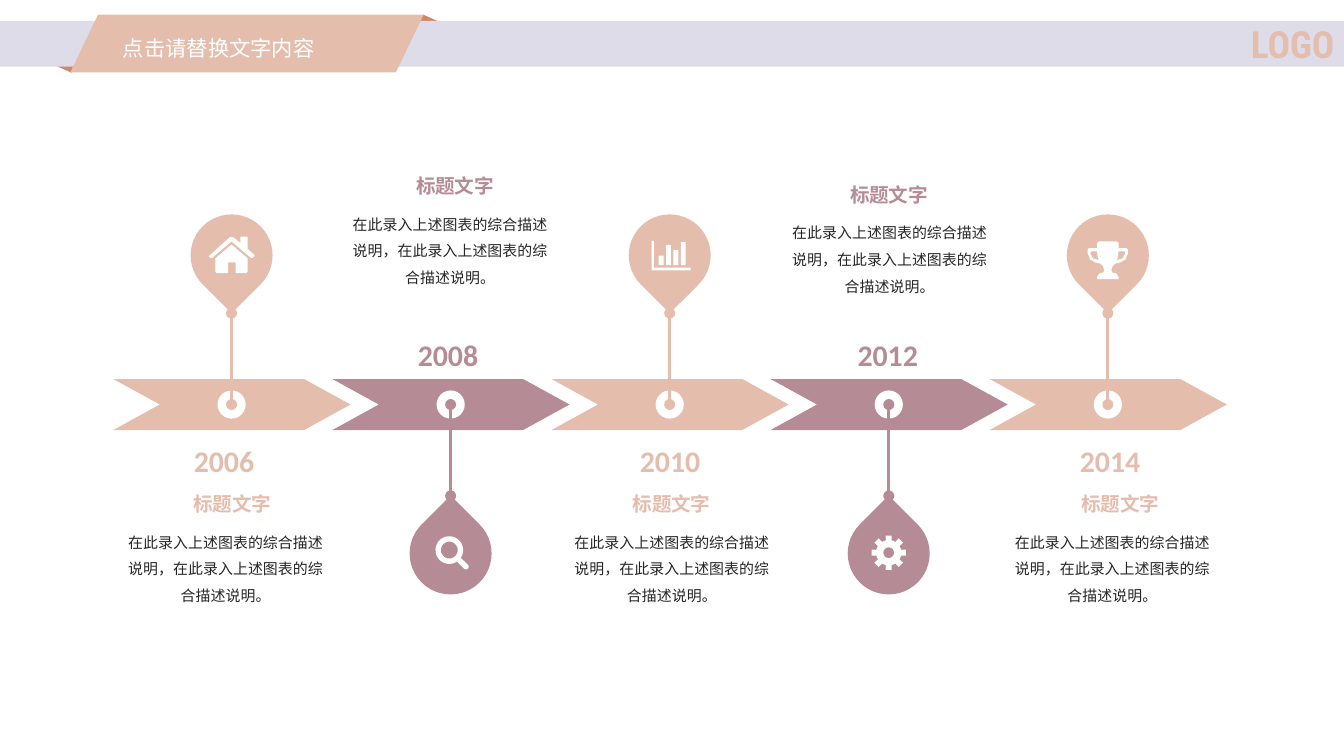
"""Build a five-step timeline slide with arrows, pins and captions."""
import math
from lxml import etree
from pptx import Presentation
from pptx import util as u
from pptx.dml.color import RGBColor
from pptx.enum import shapes, text
from pptx.oxml import ns

PEACH, MAUVE, WHITE = "E4BDAC", "B58C95", "FFFFFF"
S, A, V = shapes.MSO_SHAPE, text.PP_ALIGN, text.MSO_ANCHOR
CJK = "Noto Sans CJK SC"
BODY = "在此录入上述图表的综合描述说明，在此录入上述图表的综合描述说明。"


def paint(fill, color):
    """Give a fill, line fill or font fill a solid hex colour."""
    fill.solid()
    fill.fore_color.rgb = RGBColor.from_string(color)


def arc(cx, cy, r, start, end, n=32):
    """Return points along a circular arc, with angles in degrees."""
    steps = [math.radians(start + (end - start) * i / n) for i in range(n + 1)]
    return [(cx + r * math.cos(a), cy + r * math.sin(a)) for a in steps]


prs = Presentation()
prs.slide_width = u.Inches(10)
prs.slide_height = prs.slide_width * 9 // 16
s = prs.slides.add_slide(prs.slide_layouts[5])
G = prs.slide_width // 1000
PITCH, FIRST = 163, 172.3

parts = [
    (S.ISOSCELES_TRIANGLE, (270, 11, 90, 20), "CE8868", 0, ()),
    (S.ISOSCELES_TRIANGLE, (8, 34, 90, 20), "CE8868", 180, ()),
    (S.RECTANGLE, (0, 15.6, 1000, 34), "DEDCE9", 0, ()),
    (S.PARALLELOGRAM, (52.3, 11, 263, 43), PEACH, 0, (0.482,)),
]
for i in range(5):
    cx, low, color = FIRST + i * PITCH, i % 2, (PEACH, MAUVE)[i % 2]
    parts += [
        (S.NOTCHED_RIGHT_ARROW, (cx - 88, 282, 176.5, 38), color, 0, (1, 0.91)),
        (S.OVAL, (cx - 10.5, 290.5, 21, 21), WHITE, 0, ()),
        (S.TEAR, (cx - 30.5, 381.3 if low else 159.5, 61, 61), color, 315 if low else 135, ()),
    ]
for kind, box, color, turn, adj in parts:
    sp = s.shapes.add_shape(kind, *[int(v * G) for v in box])
    paint(sp.fill, color)
    sp.line.fill.background()
    sp.shadow.inherit = False
    sp.rotation = turn
    for k, v in enumerate(adj):
        sp.adjustments[k] = v
    if kind == S.RECTANGLE:
        bar = sp

for i in range(5):
    x, low = int((FIRST + i * PITCH) * G), i % 2
    ln = s.shapes.add_connector(shapes.MSO_CONNECTOR.STRAIGHT, x, (369 if low else 233) * G, x, 301 * G)
    paint(ln.line.fill, (PEACH, MAUVE)[low])
    ln.line.width = u.Pt(1.5)
    for tag in ("a:headEnd", "a:tailEnd"):
        etree.SubElement(ln.line._get_or_add_ln(), ns.qn(tag), type="oval")
    etree.SubElement(ln.element.spPr, ns.qn("a:effectLst"))

house = [
    [(-17, 0.5), (-1.5, -13.5), (0, -14), (1.5, -13.5), (6.5, -9.5), (6.5, -13.5),
     (7, -14.2), (11.5, -14.2), (12, -13.5), (12, -5), (17, -0.5), (17, 0.5),
     (15.5, 1.8), (14.5, 1.8), (0, -10.5), (-14.5, 1.8), (-15.5, 1.8)],
    [(-12, 2), (0, -8.2), (12, 2), (12, 12), (11, 13), (3, 13), (3, 5), (-2.5, 5),
     (-2.5, 13), (-11, 13), (-12, 12)],
]
lens = [arc(-1, -2, 10.3, 56, 394) + arc(11.4, 10.4, 2, -45, 135), arc(-1, -2, 6.3, 0, 360)]
bars = [[(-13.5, -11), (-11.8, -11), (-11.8, 9), (15.5, 9), (15.5, 11), (-13.5, 11)]]
for i, top in enumerate((0, -8, -4, -10)):
    x = -8.2 + 5.5 * i
    bars.append([(x, top), (x + 3.6, top), (x + 3.6, 7), (x, 7)])
gear = [[], arc(0, 0, 4, 0, 360)]
for a in range(0, 360, 45):
    for r, d in ((9.5, -13), (13, -10), (13, 10), (9.5, 13)):
        gear[0] += arc(0, 0, r, a + d, a + d, 1)[:1]
half = [(6.5, -10.5), (8, -9.5), (8, -5.5), (14, -5.5), (15, -4.5), (15, -1.5), (13, 3),
        (9.5, 5), (5.5, 6), (3.5, 8), (2.7, 11), (3.3, 12.5), (6.5, 13.5), (8, 16), (8, 17.5)]
handle = [(8, -3.2), (12.7, -3.2), (12.7, -1), (11, 2), (6.7, 3.5), (7.5, 1)]
cup = [half + [(-x, y) for x, y in half[::-1]], handle, [(-x, y) for x, y in handle]]

for i, icon in enumerate((house, lens, bars, gear, cup)):
    fb = None
    for outline in icon:
        pts = [(100 * x, 100 * y) for x, y in outline]
        if fb is None:
            fb = s.shapes.build_freeform(*pts[0], scale=G / 100)
        else:
            fb.move_to(*pts[0])
        fb.add_line_segments(pts[1:], close=True)
    sp = fb.convert_to_shape(int((FIRST + i * PITCH) * G), int((411.3 if i % 2 else 190.2) * G))
    paint(sp.fill, WHITE)
    sp.line.fill.background()
    sp.shadow.inherit = False

title = s.shapes.title
title.left, title.top, title.width, title.height = [int(v * G) for v in (84.5, 13, 197, 36)]
s.shapes.element.append(title.element)
inset = dict(margin_left=7 * G, margin_right=7 * G, margin_top=4 * G, margin_bottom=4 * G)
flush = dict.fromkeys(inset, 0)
labels = [
    (bar, "LOGO", PEACH, dict(size=u.Pt(20), name="Roboto Condensed", bold=True),
     dict(alignment=A.RIGHT), dict(inset, vertical_anchor=V.MIDDLE, word_wrap=True)),
    (title, "点击请替换文字内容", WHITE, dict(size=u.Pt(11.4), name="Arial", bold=False),
     dict(alignment=A.LEFT, line_spacing=1.5),
     dict(inset, vertical_anchor=V.TOP, word_wrap=True, auto_size=text.MSO_AUTO_SIZE.NONE)),
]
steps = [
    ("2006", 166.7, 329, 173, 366, 168),
    ("2008", 333.4, 250, 338.5, 129.5, 335),
    ("2010", 498.6, 329, 499.7, 366, 500),
    ("2012", 660.5, 250, 661.5, 136, 662),
    ("2014", 826, 329, 833.5, 366, 827.7),
]
for i, (year, year_x, year_y, head_x, head_y, body_x) in enumerate(steps):
    color = (PEACH, MAUVE)[i % 2]
    rows = [
        (year, year_x, year_y, 46, 27, color, dict(size=u.Pt(16), name="Calibri", bold=True),
         dict(space_before=u.Pt(3.2)), dict(vertical_anchor=V.MIDDLE, word_wrap=False)),
        ("标题文字", head_x, head_y, 59, 18, color, dict(size=u.Pt(10.5), name=CJK, bold=True),
         {}, dict(word_wrap=False)),
        (BODY, body_x, head_y + 24, 150, 58, "262626", dict(size=u.Pt(8), name=CJK),
         dict(line_spacing=1.5, space_before=u.Pt(1.6)), dict(word_wrap=True)),
    ]
    for words, cx, y, w, h, ink, font, para, frame in rows:
        sp = s.shapes.add_textbox(*[int(v * G) for v in (cx - w / 2, y, w, h)])
        labels.append((sp, words, ink, font, dict(para, alignment=A.CENTER), dict(flush, **frame)))

for sp, words, ink, font, para, frame in labels:
    tf = sp.text_frame
    p = tf.paragraphs[0]
    r = p.add_run()
    r.text = words
    for obj, fmt in ((tf, frame), (p, para), (r.font, font)):
        for k, v in fmt.items():
            setattr(obj, k, v)
    paint(r.font.fill, ink)
    etree.SubElement(r._r.get_or_add_rPr(), ns.qn("a:ea"), typeface=font["name"])

prs.save("out.pptx")
